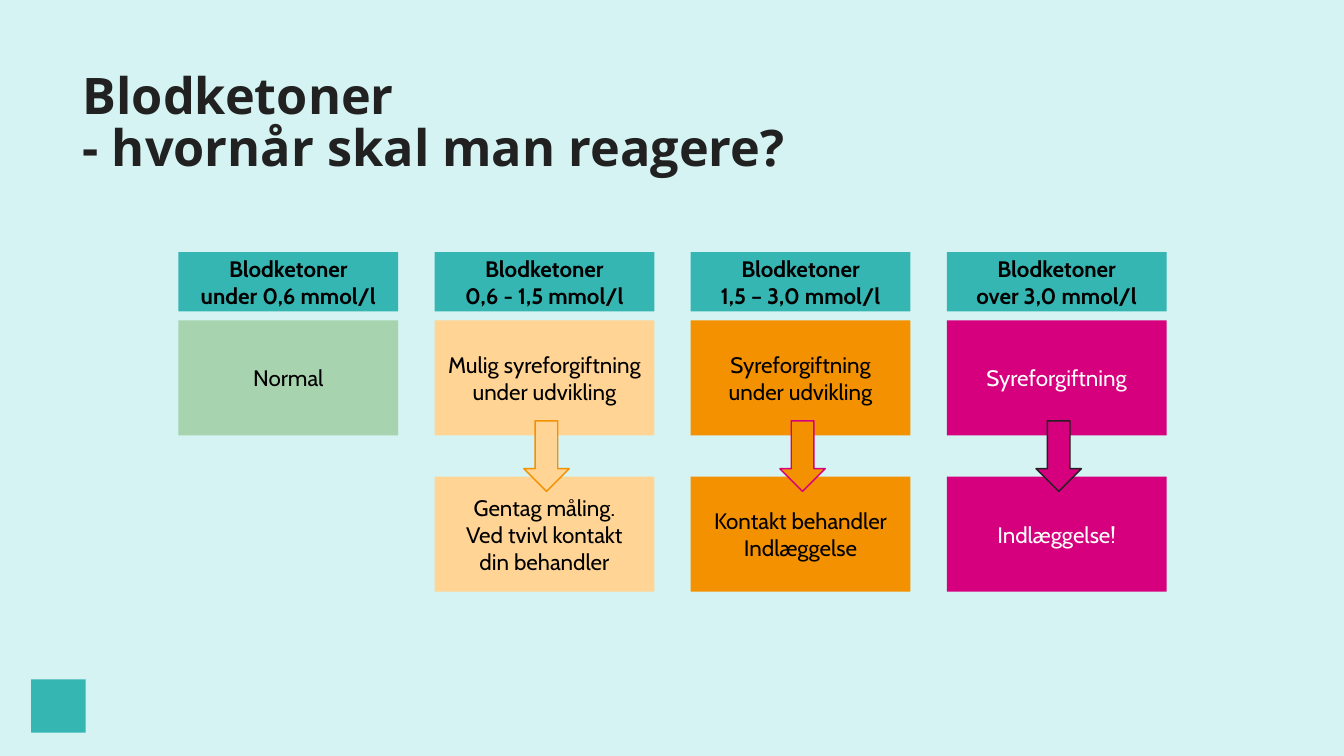
from pptx import Presentation
from pptx.dml.color import RGBColor
from pptx.enum.shapes import MSO_SHAPE
from pptx.enum.text import MSO_ANCHOR, MSO_AUTO_SIZE, PP_ALIGN
from pptx.util import Inches, Pt

TEAL, DARK, BLACK, WHITE = "35B6B3", "212121", "000000", "FFFFFF"
GREEN, PEACH, ORANGE, MAGENTA = "A7D3AE", "FFD494", "F39100", "D6007E"

GRID_LEFT, COLUMN_STEP, COLUMN_WIDTH = 1.77, 2.54, 2.18
HEADER_TOP, HEADER_HEIGHT = 2.5, 0.59
STATUS_TOP, ACTION_TOP, CARD_HEIGHT = 3.18, 4.73, 1.14
ARROW_WIDTH, ARROW_HEIGHT = 0.45, 0.7

LEVELS = [
    ("under 0,6 mmol/l", "Normal", None, GREEN, BLACK, None),
    ("0,6 - 1,5 mmol/l", "Mulig syreforgiftning under udvikling",
     "Gentag måling.\nVed tvivl kontakt\ndin behandler", PEACH, BLACK, ORANGE),
    ("1,5 – 3,0 mmol/l", "Syreforgiftning under udvikling",
     "Kontakt behandler Indlæggelse", ORANGE, BLACK, MAGENTA),
    ("over 3,0 mmol/l", "Syreforgiftning", "Indlæggelse!", MAGENTA, WHITE, DARK),
]


def color(value):
    """Turn a hex string into a colour."""
    return RGBColor.from_string(value)


def add_run(paragraph, text, font_name, size, font_color, bold):
    """Append one formatted run to a paragraph."""
    run = paragraph.add_run()
    run.text = text
    run.font.name = font_name
    run.font.size = Pt(size)
    run.font.bold = bold
    run.font.color.rgb = color(font_color)


def add_figure(slide, kind, box, fill, line=None):
    """Add a flat preset shape in a box given in inches."""
    shape = slide.shapes.add_shape(kind, *map(Inches, box))
    shape.shadow.inherit = False
    shape.fill.solid()
    shape.fill.fore_color.rgb = color(fill)
    if line:
        shape.line.color.rgb = color(line)
        shape.line.width = Pt(1)
    else:
        shape.line.fill.background()
    return shape


def add_card(slide, box, text, fill, font_color, bold=False):
    """Add a filled rectangle with centred text, one paragraph per line."""
    frame = add_figure(slide, MSO_SHAPE.RECTANGLE, box, fill).text_frame
    frame.word_wrap = True
    frame.vertical_anchor = MSO_ANCHOR.MIDDLE
    for index, line in enumerate(text.split("\n")):
        paragraph = frame.add_paragraph() if index else frame.paragraphs[0]
        paragraph.alignment = PP_ALIGN.CENTER
        add_run(paragraph, line, "Cabin", 16, font_color, bold)


def add_title(slide, box, lines):
    """Format the title placeholder and fill it with broken lines."""
    title = slide.shapes.title
    title.left, title.top, title.width, title.height = map(Inches, box)
    frame = title.text_frame
    frame.margin_left = frame.margin_right = 0
    frame.margin_top = frame.margin_bottom = 0
    frame.word_wrap = True
    frame.auto_size = MSO_AUTO_SIZE.NONE
    frame.vertical_anchor = MSO_ANCHOR.TOP
    paragraph = frame.paragraphs[0]
    paragraph.alignment = PP_ALIGN.LEFT
    paragraph.line_spacing = 0.85
    for index, line in enumerate(lines):
        if index:
            paragraph.add_line_break()
        add_run(paragraph, line, "Open Sans", 36, DARK, True)


def add_level(slide, left, level):
    """Add one column: header, status and, if needed, the action."""
    limit, status, action, fill, font_color, arrow_line = level
    add_card(slide, (left, HEADER_TOP, COLUMN_WIDTH, HEADER_HEIGHT),
             f"Blodketoner\n{limit}", TEAL, BLACK, True)
    add_card(slide, (left, STATUS_TOP, COLUMN_WIDTH, CARD_HEIGHT), status, fill, font_color)
    if action:
        add_card(slide, (left, ACTION_TOP, COLUMN_WIDTH, CARD_HEIGHT), action, fill, font_color)
        gap_middle = (STATUS_TOP + CARD_HEIGHT + ACTION_TOP) / 2
        arrow_box = (left + (COLUMN_WIDTH - ARROW_WIDTH) / 2 + 0.02,
                     gap_middle - ARROW_HEIGHT / 2, ARROW_WIDTH, ARROW_HEIGHT)
        add_figure(slide, MSO_SHAPE.DOWN_ARROW, arrow_box, fill, arrow_line)


def main():
    """Build and save the slide."""
    presentation = Presentation()
    presentation.slide_width, presentation.slide_height = Inches(13.33), Inches(7.5)
    slide = presentation.slides.add_slide(presentation.slide_layouts[5])
    slide.background.fill.solid()
    slide.background.fill.fore_color.rgb = color("D4F3F2")
    add_figure(slide, MSO_SHAPE.RECTANGLE, (0.31, 6.74, 0.54, 0.53), TEAL)
    add_title(slide, (0.82, 0.73, 11.7, 0.97),
              ["Blodketoner", "- hvornår skal man reagere?"])
    for column, level in enumerate(LEVELS):
        add_level(slide, GRID_LEFT + column * COLUMN_STEP, level)
    presentation.save("out.pptx")


if __name__ == "__main__":
    main()
